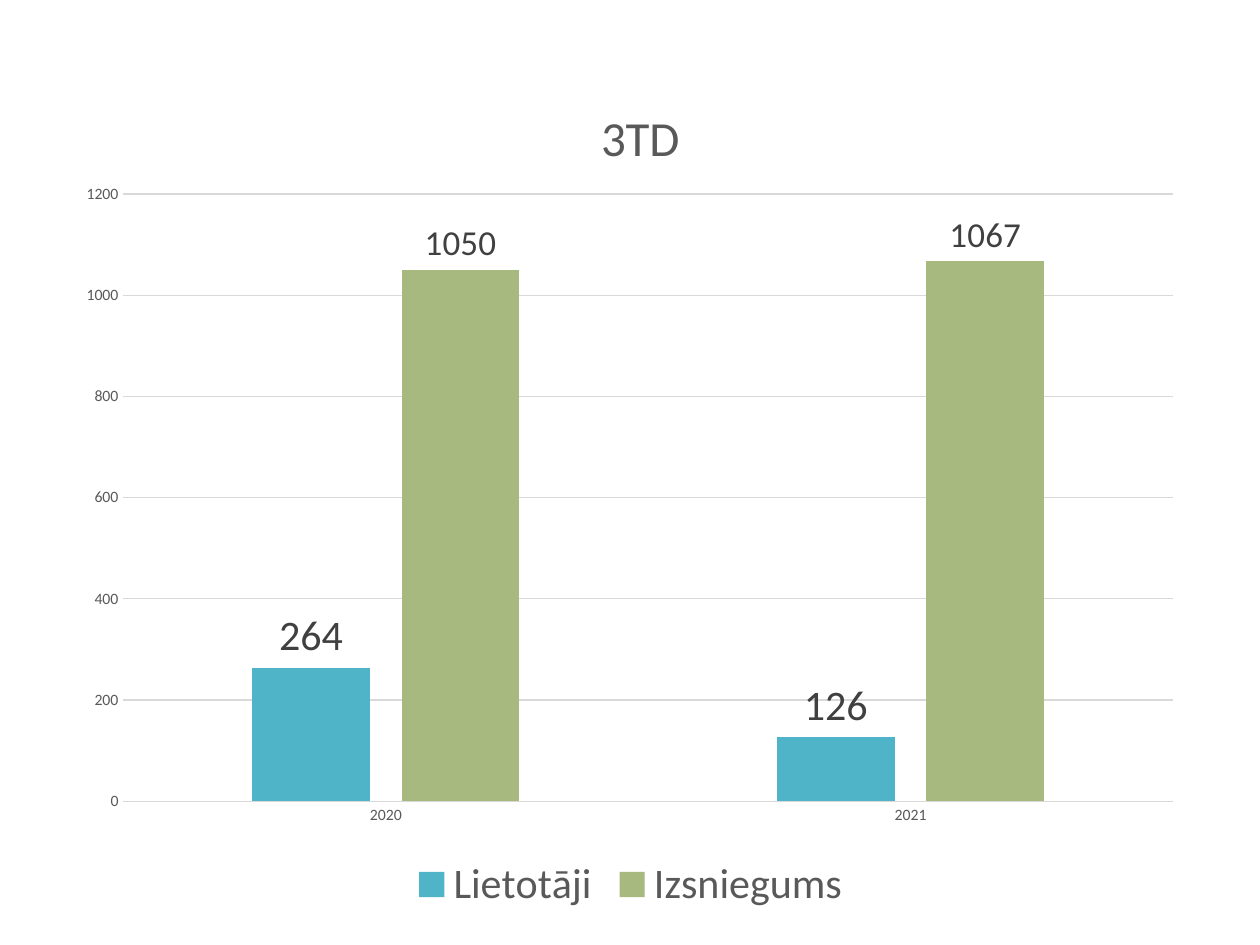
from typing import NamedTuple

from lxml.etree import SubElement
from pptx import Presentation
from pptx.chart.data import CategoryChartData
from pptx.dml.color import RGBColor
from pptx.enum.chart import XL_CHART_TYPE as ChartType
from pptx.enum.chart import XL_LABEL_POSITION as LabelPosition
from pptx.enum.chart import XL_LEGEND_POSITION as LegendPosition
from pptx.enum.chart import XL_TICK_MARK as TickMark
from pptx.oxml.ns import qn
from pptx.util import Inches, Pt

TEAL = RGBColor(0x50, 0xB4, 0xC8)
OLIVE = RGBColor(0xA8, 0xB9, 0x7F)
TEXT_GREY = RGBColor(0x59, 0x59, 0x59)
LABEL_GREY = RGBColor(0x40, 0x40, 0x40)
LINE_GREY = RGBColor(0xD9, 0xD9, 0xD9)
FONT = "Calibri"
CHART_LEFT, CHART_TOP, CHART_WIDTH, CHART_HEIGHT = 0.51, 0.44, 8.99, 6.85


class Series(NamedTuple):
    name: str
    values: tuple[int, ...]
    color: RGBColor
    label_size: int


YEARS = ("2020", "2021")
SERIES = (
    Series("Lietotāji", (264, 126), TEAL, 24),
    Series("Izsniegums", (1050, 1067), OLIVE, 20),
)


def style_font(font, size: int, color: RGBColor = TEXT_GREY) -> None:
    font.name = FONT
    font.size = Pt(size)
    font.bold = False
    font.color.rgb = color


def style_line(line) -> None:
    line.color.rgb = LINE_GREY
    line.width = Pt(0.75)


def set_layout(element, index: int, values: dict[str, float], inner: bool = False) -> None:
    """Place a chart part by fractions of the chart's size."""
    for old_layout in element.findall(qn("c:layout")):
        element.remove(old_layout)
    layout = SubElement(element, qn("c:layout"))
    element.insert(index, layout)
    manual = SubElement(layout, qn("c:manualLayout"))
    if inner:
        SubElement(manual, qn("c:layoutTarget")).set("val", "inner")
    for key in ("x", "y"):
        SubElement(manual, qn(f"c:{key}Mode")).set("val", "edge")
    for key, value in values.items():
        SubElement(manual, qn(f"c:{key}")).set("val", f"{value:.4f}")


def add_loan_chart(slide) -> None:
    data = CategoryChartData()
    data.categories = YEARS
    for series in SERIES:
        data.add_series(series.name, series.values)
    chart = slide.shapes.add_chart(
        ChartType.COLUMN_CLUSTERED,
        Inches(CHART_LEFT), Inches(CHART_TOP),
        Inches(CHART_WIDTH), Inches(CHART_HEIGHT), data,
    ).chart
    chart.font.name = FONT
    chart.font.size = Pt(10)

    title = chart.chart_title
    title.text_frame.text = "3TD"
    style_font(title.text_frame.paragraphs[0].runs[0].font, 28)
    title.include_in_layout = False
    title_element = title.text_frame._txBody.getparent().getparent()
    set_layout(title_element, 1, {
        "x": (4.7 - CHART_LEFT) / CHART_WIDTH,
        "y": (0.76 - CHART_TOP) / CHART_HEIGHT,
    })
    set_layout(chart._chartSpace.chart.plotArea, 0, {
        "x": (0.98 - CHART_LEFT) / CHART_WIDTH,
        "y": (1.54 - CHART_TOP) / CHART_HEIGHT,
        "w": 8.33 / CHART_WIDTH,
        "h": 4.82 / CHART_HEIGHT,
    }, inner=True)

    chart.has_legend = True
    chart.legend.position = LegendPosition.BOTTOM
    chart.legend.include_in_layout = False
    style_font(chart.legend.font, 24)

    for axis in (chart.category_axis, chart.value_axis):
        axis.major_tick_mark = axis.minor_tick_mark = TickMark.NONE
        style_font(axis.tick_labels.font, 9)
    style_line(chart.category_axis.format.line)
    value_axis = chart.value_axis
    value_axis.minimum_scale, value_axis.maximum_scale = 0, 1200
    value_axis.major_unit = 200
    value_axis.format.line.fill.background()
    style_line(value_axis.major_gridlines.format.line)

    plot = chart.plots[0]
    plot.gap_width, plot.overlap = 219, -27
    plot.vary_by_categories = False
    for column, series in zip(plot.series, SERIES):
        column.invert_if_negative = False
        column.format.fill.solid()
        column.format.fill.fore_color.rgb = series.color
        labels = column.data_labels
        labels.show_value = True
        labels.position = LabelPosition.OUTSIDE_END
        style_font(labels.font, series.label_size, LABEL_GREY)


def main() -> None:
    presentation = Presentation()
    presentation.slide_width = Inches(10)
    presentation.slide_height = Inches(7.5)
    slide = presentation.slides.add_slide(presentation.slide_layouts[6])
    add_loan_chart(slide)
    presentation.save("out.pptx")


if __name__ == "__main__":
    main()
